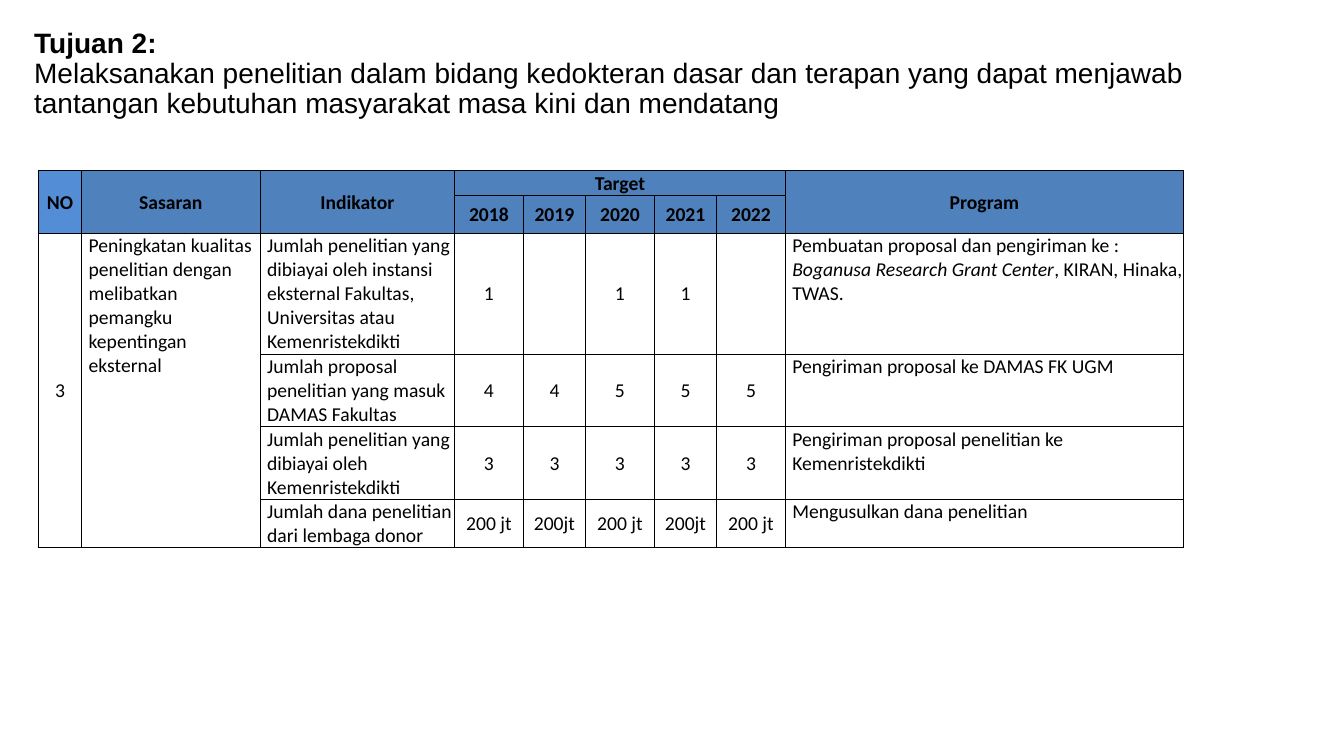
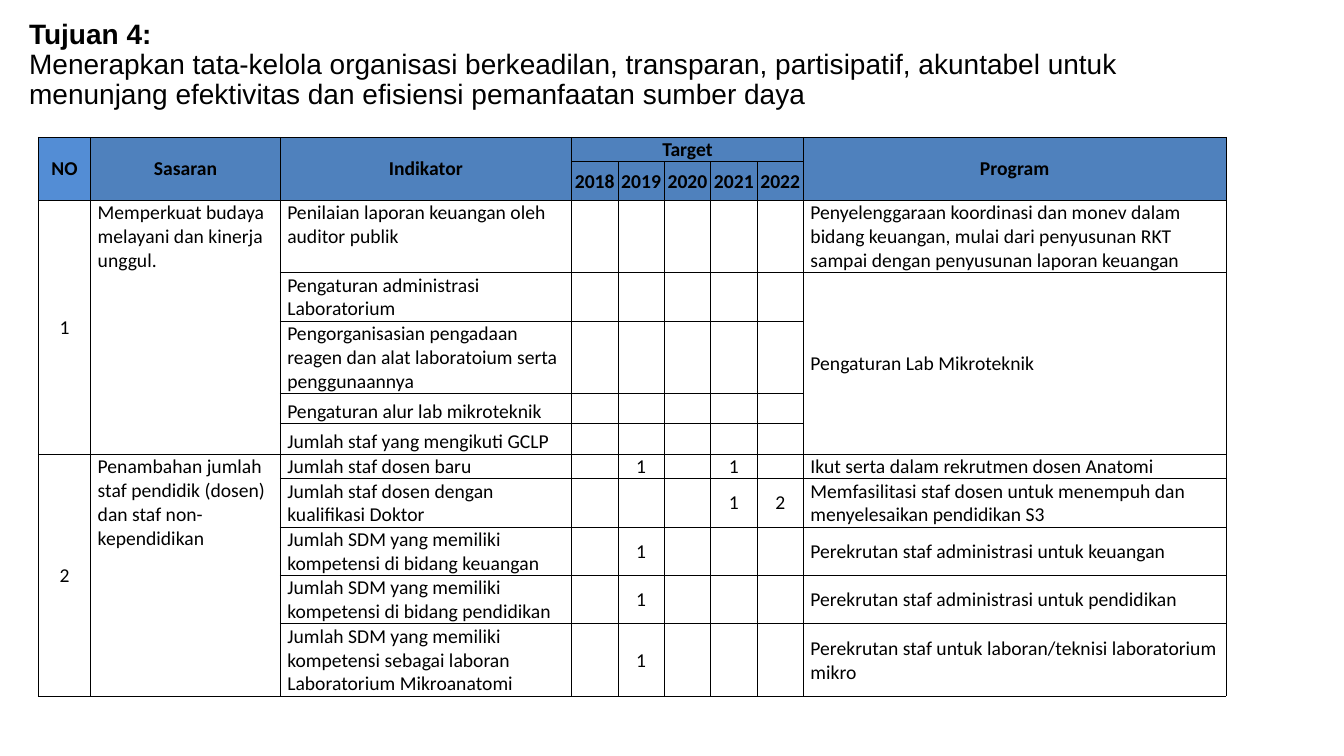
from dataclasses import dataclass
from itertools import accumulate

from lxml import etree
from pptx import Presentation
from pptx.dml.color import RGBColor
from pptx.enum import text
from pptx.oxml import ns
from pptx.util import Inches, Pt

TOP, MIDDLE, BOTTOM = (text.MSO_ANCHOR.TOP, text.MSO_ANCHOR.MIDDLE,
                       text.MSO_ANCHOR.BOTTOM)


@dataclass(frozen=True)
class Theme:
    ink: str = "000000"
    paper: str = "FFFFFF"
    header: str = "4F81BD"
    header_no: str = "538DD5"
    title_font: str = "Arial"
    table_font: str = "Calibri"
    title_size: int = 20
    table_size: int = 14
    border: float = 0.5
    inset: float = 0.01
    indent: float = 0.07
    line: float = 0.24


THEME = Theme()
YEARS = ("2018", "2019", "2020", "2021", "2022")
HEADINGS = {0: "NO", 1: "Sasaran", 2: "Indikator", 3: "Target", 8: "Program"}
HEADER_LINES = (1, 1.6)
LOOSE = 1.25
BLANK = ("",) * 5
ONE_IN_2019 = ("", "1", "", "", "")

GOALS = [
    {
        "heading": "Tujuan 2:",
        "goal": "Melaksanakan penelitian dalam bidang kedokteran dasar dan terapan yang dapat "
                "menjawab tantangan kebutuhan masyarakat masa kini dan mendatang",
        "title_at": (0.24, 0.24, 11.91, 1.45),
        "table_at": (0.38, 1.69),
        "columns": (0.43, 1.77, 1.93, 0.68, 0.62, 0.68, 0.62, 0.68, 3.95),
        "program_anchor": TOP,
        "groups": [
            ("3", "Peningkatan kualitas penelitian dengan melibatkan pemangku kepentingan eksternal", [
                (5, "Jumlah penelitian yang dibiayai oleh instansi eksternal Fakultas, "
                    "Universitas atau Kemenristekdikti", ("1", "", "1", "1", ""),
                 "Pembuatan proposal dan pengiriman ke : *Boganusa Research Grant Center*, "
                 "KIRAN, Hinaka, TWAS."),
                (3, "Jumlah proposal penelitian yang masuk DAMAS Fakultas",
                 ("4", "4", "5", "5", "5"), "Pengiriman proposal ke DAMAS FK UGM"),
                (3, "Jumlah penelitian yang dibiayai oleh Kemenristekdikti",
                 ("3",) * 5, "Pengiriman proposal penelitian ke Kemenristekdikti"),
                (2, "Jumlah dana penelitian dari lembaga donor",
                 ("200 jt", "200jt", "200 jt", "200jt", "200 jt"),
                 "Mengusulkan dana penelitian"),
            ]),
        ],
    },
    {
        "heading": "Tujuan 4:",
        "goal": "Menerapkan tata-kelola organisasi berkeadilan, transparan, partisipatif, "
                "akuntabel untuk menunjang efektivitas dan efisiensi pemanfaatan sumber daya",
        "title_at": (0.19, 0.15, 11.96, 1.45),
        "table_at": (0.38, 1.36),
        "columns": (0.52, 1.88, 2.89, 0.46, 0.46, 0.46, 0.46, 0.46, 4.19),
        "program_anchor": MIDDLE,
        "groups": [
            ("1", "Memperkuat budaya melayani dan kinerja unggul.", [
                (3, "Penilaian laporan keuangan oleh auditor publik", BLANK,
                 "Penyelenggaraan koordinasi dan monev dalam bidang keuangan, mulai dari "
                 "penyusunan RKT sampai dengan penyusunan laporan keuangan"),
                (2, "Pengaturan administrasi Laboratorium", BLANK, "Pengaturan Lab Mikroteknik"),
                (3, "Pengorganisasian pengadaan reagen dan alat laboratoium serta penggunaannya",
                 BLANK, None),
                (LOOSE, "Pengaturan alur lab mikroteknik", BLANK, None),
                (LOOSE, "Jumlah staf yang mengikuti GCLP", BLANK, None),
            ]),
            ("2", "Penambahan jumlah staf pendidik (dosen) dan staf non-kependidikan", [
                (1, "Jumlah staf dosen baru", ("", "1", "", "1", ""),
                 "Ikut serta dalam rekrutmen dosen Anatomi"),
                (2, "Jumlah staf dosen dengan kualifikasi Doktor", ("", "", "", "1", "2"),
                 "Memfasilitasi staf dosen untuk menempuh dan menyelesaikan pendidikan S3"),
                (2, "Jumlah SDM yang memiliki kompetensi di bidang keuangan", ONE_IN_2019,
                 "Perekrutan staf administrasi untuk keuangan"),
                (2, "Jumlah SDM yang memiliki kompetensi di bidang pendidikan", ONE_IN_2019,
                 "Perekrutan staf administrasi untuk pendidikan"),
                (3, "Jumlah SDM yang memiliki kompetensi sebagai laboran Laboratorium Mikroanatomi",
                 ONE_IN_2019, "Perekrutan staf untuk laboran/teknisi laboratorium mikro"),
            ]),
        ],
    },
]


def style(run, font, size, bold=False, italic=False):
    run.font.name, run.font.size = font, Pt(size)
    run.font.bold, run.font.italic = bold, italic
    run.font.color.rgb = RGBColor.from_string(THEME.ink)


def add_title(slide, goal):
    frame = slide.shapes.add_textbox(*map(Inches, goal["title_at"])).text_frame
    frame.word_wrap = True
    line = frame.paragraphs[0]
    line.text = f"{goal['heading']}\v{goal['goal']}"
    line.line_spacing = 0.9
    for run, bold in zip(line.runs, (True, False)):
        style(run, THEME.title_font, THEME.title_size, bold)


def prepare(cell, fill):
    cell.fill.solid()
    cell.fill.fore_color.rgb = RGBColor.from_string(fill)
    cell.margin_left = cell.margin_right = cell.margin_top = Inches(THEME.inset)
    cell.margin_bottom = 0
    end = cell.text_frame.paragraphs[0]._p.get_or_add_endParaRPr()
    end.set("sz", str(THEME.table_size * 100))
    properties = cell._tc.get_or_add_tcPr()
    for place, side in enumerate(("lnL", "lnR", "lnT", "lnB")):
        edge = etree.Element(ns.qn(f"a:{side}"), w=str(Pt(THEME.border)))
        solid = etree.SubElement(edge, ns.qn("a:solidFill"))
        etree.SubElement(solid, ns.qn("a:srgbClr"), val=THEME.ink)
        properties.insert(place, edge)


def write(cell, words, anchor=MIDDLE, centred=True, bold=False):
    cell.vertical_anchor = anchor
    if not words:
        return
    line = cell.text_frame.paragraphs[0]
    if centred:
        line.alignment = text.PP_ALIGN.CENTER
    else:
        cell.margin_left = Inches(THEME.indent)
    for place, part in enumerate(words.split("*")):
        run = line.add_run()
        run.text = part
        style(run, THEME.table_font, THEME.table_size, bold, place % 2 == 1)


def add_plan(slide, goal):
    groups = goal["groups"]
    entries = [entry for _, _, members in groups for entry in members]
    lines = [*HEADER_LINES, *(entry[0] for entry in entries)]
    heights = [round(count * THEME.line, 2) for count in lines]
    columns = goal["columns"]
    plan = slide.shapes.add_table(
        len(heights), len(columns),
        *map(Inches, (*goal["table_at"], sum(columns), sum(heights)))).table
    plan.first_row = plan.horz_banding = False
    for column, width in zip(plan.columns, columns):
        column.width = Inches(width)
    for row, height in zip(plan.rows, heights):
        row.height = Inches(height)
    for r in range(len(heights)):
        for c in range(len(columns)):
            header = THEME.header if c else THEME.header_no
            prepare(plan.cell(r, c), header if r < 2 else THEME.paper)

    for c, heading in HEADINGS.items():
        write(plan.cell(0, c), heading, bold=True)
        plan.cell(0, c).merge(plan.cell(0, 7) if heading == "Target" else plan.cell(1, c))
    for c, year in enumerate(YEARS, 3):
        write(plan.cell(1, c), year, bold=True)

    starts = accumulate((len(members) for _, _, members in groups), initial=2)
    for start, (number, objective, members) in zip(starts, groups):
        write(plan.cell(start, 0), number)
        write(plan.cell(start, 1), objective, TOP, centred=False)
        for c in (0, 1):
            plan.cell(start, c).merge(plan.cell(start + len(members) - 1, c))

    for r, (count, indicator, targets, program) in enumerate(entries, 2):
        write(plan.cell(r, 2), indicator, BOTTOM if count == LOOSE else TOP, centred=False)
        for c, target in enumerate(targets, 3):
            write(plan.cell(r, c), target)
        if program:
            write(plan.cell(r, 8), program, goal["program_anchor"], centred=False)
            last = r
            while last - 1 < len(entries) and entries[last - 1][3] is None:
                last += 1
            if last > r:
                plan.cell(r, 8).merge(plan.cell(last, 8))


def main():
    deck = Presentation()
    deck.slide_width, deck.slide_height = Inches(13.33), Inches(7.5)
    for goal in GOALS:
        slide = deck.slides.add_slide(deck.slide_layouts[6])
        add_title(slide, goal)
        add_plan(slide, goal)
    deck.save("out.pptx")


if __name__ == "__main__":
    main()
